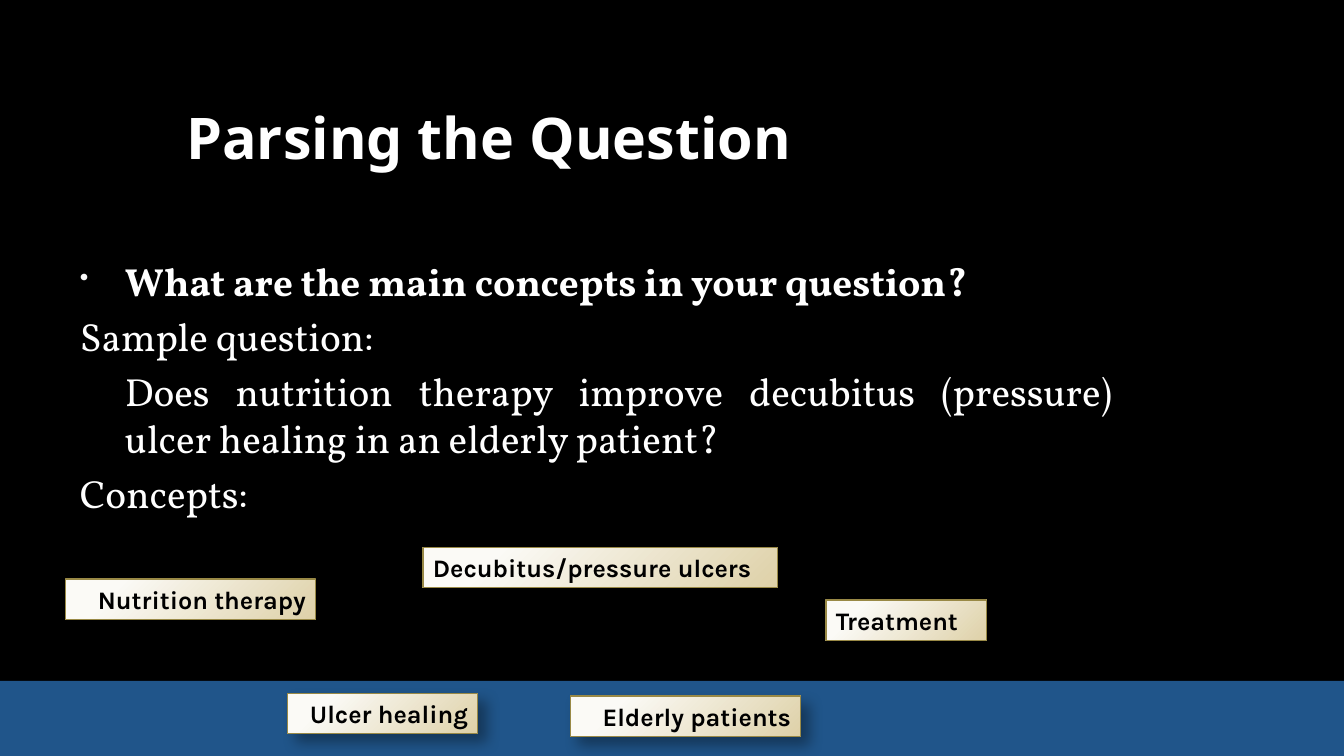
from pptx import Presentation
from pptx import util as u
from pptx.dml.color import RGBColor
from pptx.enum import shapes, text
from pptx.oxml import parse_xml
from pptx.oxml.ns import nsdecls

PX = 914400 / 100.8
ALIGN = text.PP_ALIGN


class Theme:
    back, band, ink, white = "000000", "20558A", "000000", "FFFFFF"
    dot, edge = "F9F9F9", "998946"
    glow, sand = "FBFAF6", "DED1A8"
    head = dict(name="Noto Sans", size=u.Pt(41), bold=True)
    body = dict(name="Vollkorn", size=u.Pt(28), bold=False)
    tag = dict(name="Karla", size=u.Pt(18), bold=True)


def px(*vals):
    return [u.Emu(round(v * PX)) for v in vals]


def style(para, look, color, align):
    para.alignment = align
    for key, val in look.items():
        setattr(para.font, key, val)
    para.font.color.rgb = RGBColor.from_string(color)


def add_rect(slide, box):
    rect = slide.shapes.add_shape(shapes.MSO_SHAPE.RECTANGLE, *px(*box))
    rect.shadow.inherit = False
    return rect


def add_band(slide, box):
    band = add_rect(slide, box)
    band.fill.solid()
    band.fill.fore_color.rgb = RGBColor.from_string(Theme.band)
    band.line.fill.background()


def add_frame(slide, box, anchor):
    frame = slide.shapes.add_textbox(*px(*box)).text_frame
    frame.word_wrap = True
    frame.vertical_anchor = anchor
    return frame


def add_title(slide, box, words):
    para = add_frame(slide, box, text.MSO_ANCHOR.MIDDLE).paragraphs[0]
    para.text = words
    style(para, Theme.head, Theme.white, ALIGN.CENTER)


def add_body(slide, box, rows):
    frame = add_frame(slide, box, text.MSO_ANCHOR.TOP)
    for i, (words, hang, lead) in enumerate(rows):
        para = frame.paragraphs[0] if i == 0 else frame.add_paragraph()
        para.text = words
        props = para._p.get_or_add_pPr()
        left, shift = px(60, -45 if hang else 0)
        props.set("marL", str(left))
        props.set("indent", str(shift))
        if i:
            para.space_before = u.Pt(5.6)
        if lead:
            for xml in (f'<a:buClr {nsdecls("a")}><a:srgbClr val="{Theme.dot}"/></a:buClr>',
                        f'<a:buSzPct {nsdecls("a")} val="65000"/>',
                        f'<a:buChar {nsdecls("a")} char="•"/>'):
                props.append(parse_xml(xml))
        style(para, {**Theme.body, "bold": lead}, Theme.white, ALIGN.JUSTIFY)


def add_tag(slide, left, top, width, words, align):
    tag = add_rect(slide, (left, top, width, 41))
    # Radial fill centred beyond the top left corner
    props = tag._element.spPr
    props.find("{*}prstGeom").addnext(parse_xml(
        f'<a:gradFill {nsdecls("a")} rotWithShape="1"><a:gsLst>'
        f'<a:gs pos="20000"><a:srgbClr val="{Theme.glow}"/></a:gs>'
        f'<a:gs pos="100000"><a:srgbClr val="{Theme.sand}"/></a:gs></a:gsLst>'
        '<a:path path="circle"><a:fillToRect l="-15000" t="-15000" '
        'r="115000" b="115000"/></a:path></a:gradFill>'))
    tag.line.color.rgb = RGBColor.from_string(Theme.edge)
    tag.line.width = u.Pt(0.75)
    # Soft drop shadow
    props.find("{*}effectLst").append(parse_xml(
        f'<a:outerShdw {nsdecls("a")} blurRad="130000" dist="101600" '
        'dir="2700000" algn="tl" rotWithShape="0"><a:srgbClr val="000000">'
        '<a:alpha val="35000"/></a:srgbClr></a:outerShdw>'))
    # Label
    frame = tag.text_frame
    frame.word_wrap = True
    frame.vertical_anchor = text.MSO_ANCHOR.TOP
    para = frame.paragraphs[0]
    para.text = words
    style(para, Theme.tag, Theme.ink, align)


def main():
    deck = Presentation()
    deck.slide_width, deck.slide_height = px(1344, 756)
    slide = deck.slides.add_slide(deck.slide_layouts[6])
    fill = slide.background.fill
    fill.solid()
    fill.fore_color.rgb = RGBColor.from_string(Theme.back)

    # Footer band, title and question
    add_band(slide, (0, 681, 1344, 75))
    add_title(slide, (152, 82, 674, 109), "Parsing the Question")
    add_body(slide, (55, 252, 1067, 420), [
        ("What are the main concepts in your question?", True, True),
        ("Sample question:", True, False),
        ("Does nutrition therapy improve decubitus (pressure) "
         "ulcer healing in an elderly patient?", False, False),
        ("Concepts:", True, False)])

    # Concept tags
    for tag in [(66, 579, 250, "Nutrition therapy", ALIGN.RIGHT),
                (423, 547, 355, "Decubitus/pressure ulcers", ALIGN.LEFT),
                (288, 693, 190, "Ulcer healing", ALIGN.RIGHT),
                (571, 696, 230, "Elderly patients", ALIGN.RIGHT),
                (826, 600, 161, "Treatment", ALIGN.LEFT)]:
        add_tag(slide, *tag)
    deck.save("out.pptx")


if __name__ == "__main__":
    main()
